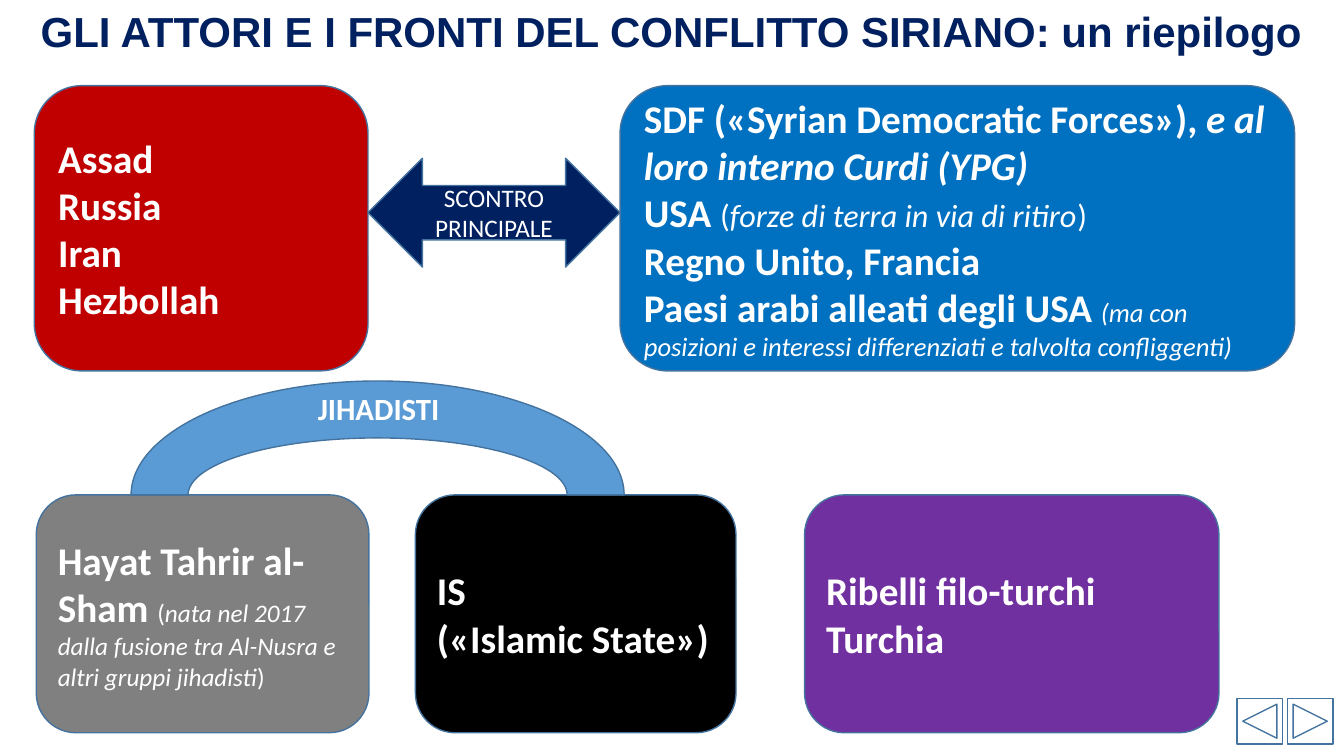
import pptx
import pptx.util
import pptx.dml.color
import pptx.enum.shapes
import pptx.enum.text

SHAPE = pptx.enum.shapes.MSO_SHAPE
ALIGN = pptx.enum.text.PP_ALIGN
ANCHOR = pptx.enum.text.MSO_ANCHOR
Inches = pptx.util.Inches

COLORS = {
    "navy": "002060", "outline": "43739E", "white": "FFFFFF", "red": "C00000",
    "blue": "0070C0", "gray": "808080", "black": "000000", "purple": "7030A0",
    "arc": "5B9BD5",
}
TITLE = "GLI ATTORI E I FRONTI DEL CONFLITTO SIRIANO: un riepilogo"
TOP_ROW, BOTTOM_ROW = (0.85, 2.83), (4.91, 2.36)

ACTORS = [
    (0.34, 3.31, TOP_ROW, "red", [
        [("Assad", 28, "b")],
        [("Russia", 28, "b")],
        [("Iran", 28, "b")],
        [("Hezbollah", 28, "b")],
    ]),
    (4.12, 3.18, BOTTOM_ROW, "black", [
        [("IS", 28, "b")],
        [("(«Islamic State»)", 28, "b")],
    ]),
    (0.36, 3.3, BOTTOM_ROW, "gray", [
        [("Hayat Tahrir al-Sham ", 28, "b"), ("(", 18, ""),
         ("nata nel 2017 dalla fusione tra Al-Nusra e altri gruppi jihadisti", 18, "i"),
         (")", 18, "")],
    ]),
    (6.15, 6.69, TOP_ROW, "blue", [
        [("SDF («Syrian Democratic Forces»), ", 28, "b"),
         ("e al loro interno Curdi (YPG)", 28, "bi")],
        [("USA ", 28, "b"), ("(", 23, ""),
         ("forze di terra in via di ritiro", 23, "i"), (")", 23, "")],
        [("Regno Unito, Francia", 28, "b")],
        [("Paesi arabi alleati degli USA ", 28, "b"),
         ("(ma con posizioni e interessi differenziati e talvolta confliggenti)", 19, "i")],
    ]),
    (7.98, 4.11, BOTTOM_ROW, "purple", [
        [("Ribelli filo-turchi", 28, "b")],
        [("Turchia", 28, "b")],
    ]),
]
CLASH = [[("SCONTRO PRINCIPALE", 18, "")]]
JIHADISTS = [[("JIHADISTI", 22, "b")]]
BUTTONS = [
    (SHAPE.ACTION_BUTTON_FORWARD_OR_NEXT, 12.77),
    (SHAPE.ACTION_BUTTON_BACK_OR_PREVIOUS, 12.27),
]


def rgb(name):
    return pptx.dml.color.RGBColor.from_string(COLORS[name])


def add_shape(s, kind, box, fill=None):
    sp = s.shapes.add_shape(kind, *map(Inches, box))
    sp.shadow.inherit = False
    if fill:
        sp.fill.solid()
        sp.fill.fore_color.rgb = rgb(fill)
    else:
        sp.fill.background()
    sp.line.color.rgb = rgb("outline")
    sp.line.width = pptx.util.Pt(1)
    return sp


def write(tf, paragraphs, align, font="Calibri", color="white"):
    tf.word_wrap = True
    for i, runs in enumerate(paragraphs):
        p = tf.paragraphs[0] if i == 0 else tf.add_paragraph()
        p.alignment = align
        for text, size, style in runs:
            r = p.add_run()
            r.text = text
            r.font.name = font
            r.font.size = pptx.util.Pt(size)
            r.font.bold = "b" in style
            r.font.italic = "i" in style
            r.font.color.rgb = rgb(color)


def main():
    prs = pptx.Presentation()
    prs.slide_width, prs.slide_height = Inches(13.33), Inches(7.5)
    s = prs.slides.add_slide(prs.slide_layouts[5])

    for kind, left in BUTTONS:
        add_shape(s, kind, (left, 6.93, 0.45, 0.45))

    title = s.shapes.title
    title.left, title.top = 0, 0
    title.width, title.height = prs.slide_width, Inches(0.61)
    title.text_frame.auto_size = pptx.enum.text.MSO_AUTO_SIZE.NONE
    write(title.text_frame, [[(TITLE, 30, "b")]], ALIGN.CENTER, "Arial", "navy")

    for left, width, (top, height), fill, paragraphs in ACTORS:
        sp = add_shape(s, SHAPE.ROUNDED_RECTANGLE, (left, top, width, height), fill)
        sp.text_frame.vertical_anchor = ANCHOR.MIDDLE
        write(sp.text_frame, paragraphs, ALIGN.LEFT)

    arrow = add_shape(s, SHAPE.LEFT_RIGHT_ARROW, (3.65, 1.57, 2.5, 1.08), "navy")
    arrow.text_frame.vertical_anchor = ANCHOR.MIDDLE
    write(arrow.text_frame, CLASH, ALIGN.CENTER)

    add_shape(s, SHAPE.BLOCK_ARC, (1.3, 3.78, 4.89, 2.26), "arc")
    label = s.shapes.add_textbox(*map(Inches, (2.61, 3.82, 2.29, 0.47)))
    write(label.text_frame, JIHADISTS, ALIGN.CENTER)

    prs.save("out.pptx")


if __name__ == "__main__":
    main()
